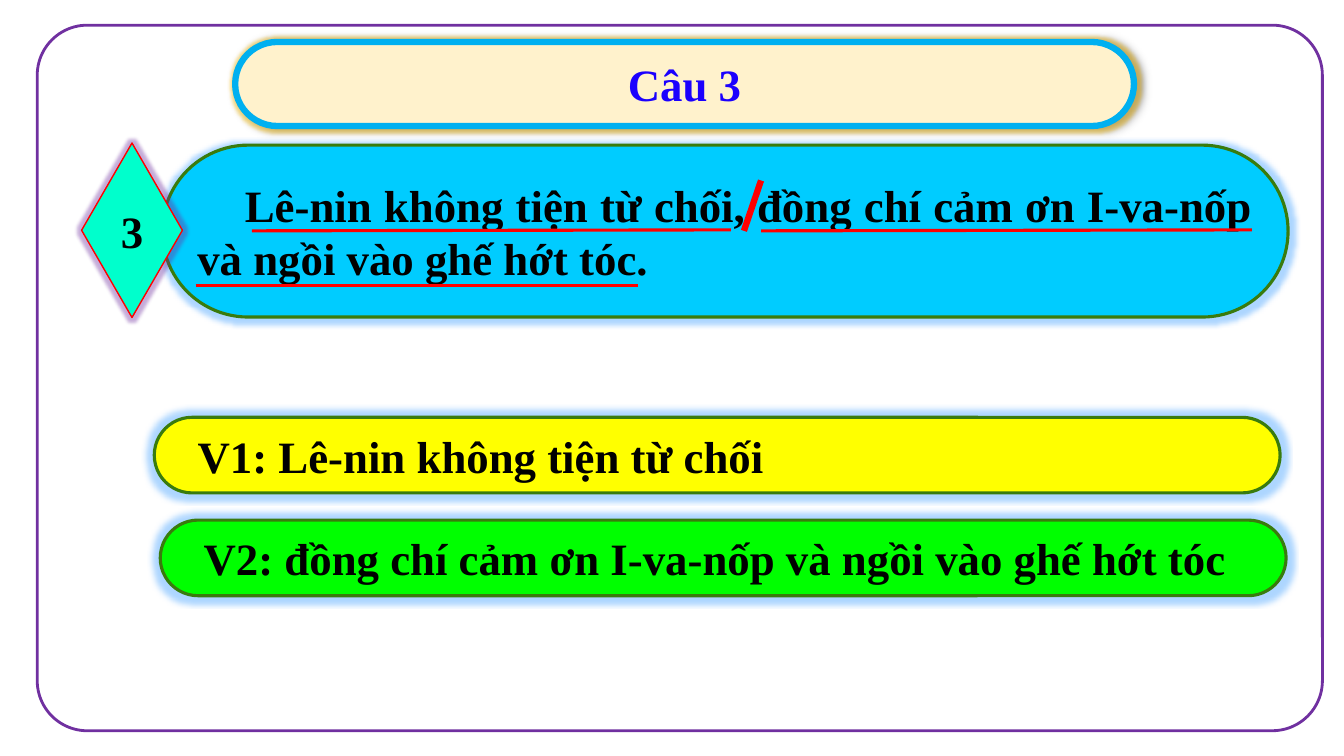
from lxml import etree
from pptx import Presentation
from pptx.dml.color import RGBColor
from pptx.enum.shapes import MSO_CONNECTOR, MSO_SHAPE
from pptx.enum.text import MSO_ANCHOR, PP_ALIGN
from pptx.oxml.ns import qn
from pptx.util import Pt

ROUNDED = MSO_SHAPE.ROUNDED_RECTANGLE
DIAMOND = MSO_SHAPE.DIAMOND
STRAIGHT = MSO_CONNECTOR.STRAIGHT
MIDDLE = MSO_ANCHOR.MIDDLE
CENTER = PP_ALIGN.CENTER
JUSTIFY = PP_ALIGN.JUSTIFY

BLACK = "000000"
RED = "FF0000"
PURPLE = "7030A0"
GREEN_EDGE = "397B0D"
BLUE_GLOW = "3399FF"


def color(value):
    return RGBColor.from_string(value)


class Slide:
    font = "Times New Roman"
    size = 32

    def __init__(self, page):
        self.page = page

    def shape(self, kind, left, top, width, height, edge, weight, fill=None, round_by=None):
        box = self.page.shapes.add_shape(kind, Pt(left), Pt(top), Pt(width), Pt(height))
        if round_by is not None:
            box.adjustments[0] = round_by
        if fill:
            box.fill.solid()
            box.fill.fore_color.rgb = color(fill)
        else:
            box.fill.background()
        box.line.color.rgb = color(edge)
        box.line.width = Pt(weight)
        box.shadow.inherit = False
        return box

    def effect(self, box, kind, value, **lengths):
        effects = box._element.spPr.find(qn("a:effectLst"))
        node = etree.SubElement(effects, qn(kind))
        for name, length in lengths.items():
            node.set(name, str(Pt(length)))
        tint = etree.SubElement(node, qn("a:srgbClr"), val=value)
        etree.SubElement(tint, qn("a:alpha"), val="40000")

    def text(self, box, words, align, ink=BLACK, margin=0, indent=0):
        frame = box.text_frame
        frame.word_wrap = True
        frame.vertical_anchor = MIDDLE
        frame.text = words
        para = frame.paragraphs[0]
        para.alignment = align
        if margin or indent:
            properties = para._p.get_or_add_pPr()
            properties.set("marL", str(Pt(margin)))
            properties.set("indent", str(Pt(indent)))
        for span in para.runs:
            span.font.name = self.font
            span.font.size = Pt(self.size)
            span.font.bold = True
            span.font.color.rgb = color(ink)

    def pill(self, left, top, height, fill, words, margin=0, indent=0):
        box = self.shape(ROUNDED, left, top, 804.2, height, GREEN_EDGE, 2.25, fill, 0.5)
        self.effect(box, "a:glow", BLUE_GLOW, rad=8)
        self.text(box, words, JUSTIFY, margin=margin, indent=indent)

    def line(self, start, end, weight):
        mark = self.page.shapes.add_connector(STRAIGHT, *map(Pt, start + end))
        mark.line.color.rgb = color(RED)
        mark.line.width = Pt(weight)
        etree.SubElement(mark._element.spPr, qn("a:effectLst"))


def main():
    deck = Presentation()
    deck.slide_width = Pt(960)
    deck.slide_height = Pt(540)
    slide = Slide(deck.slides.add_slide(deck.slide_layouts[6]))

    title = slide.shape(ROUNDED, 168, 30, 642, 60, "00B0F0", 4.5, "FFF2CC", 0.5)
    slide.effect(title, "a:glow", "FFC000", rad=5)
    slide.effect(title, "a:outerShdw", BLACK, blurRad=4, dist=3)
    slide.text(title, "Câu 3", CENTER, "1B00FE")

    slide.shape(ROUNDED, 26.6, 18, 918, 504, PURPLE, 2, round_by=0.071)

    slide.pill(115.9, 103.7, 122.8, "00CCFF",
               "Lê-nin không tiện từ chối, đồng chí cảm ơn I-va-nốp "
               "và ngồi vào ghế hớt tóc.", indent=34)

    number = slide.shape(DIAMOND, 58.3, 102.2, 72, 124.6, RED, 1, "00FFCC")
    slide.effect(number, "a:glow", PURPLE, rad=5)
    slide.text(number, "3", CENTER)

    clauses = [
        (110.2, 298.1, "FFFF00", "V1: Lê-nin không tiện từ chối"),
        (114.5, 371.5, "00FF00", "V2: đồng chí cảm ơn I-va-nốp và ngồi vào ghế hớt tóc"),
    ]
    for left, top, fill, words in clauses:
        slide.pill(left, top, 54, fill, words, margin=16)

    slide.line((543.6, 128.9), (531.4, 164.9), 4.5)
    underlines = [
        ((180, 164.9), (522, 164.2)),
        ((139.7, 203.8), (455.8, 203.8)),
        ((543.6, 164.9), (894.2, 164.2)),
    ]
    for start, end in underlines:
        slide.line(start, end, 2.25)

    deck.save("out.pptx")


if __name__ == "__main__":
    main()
